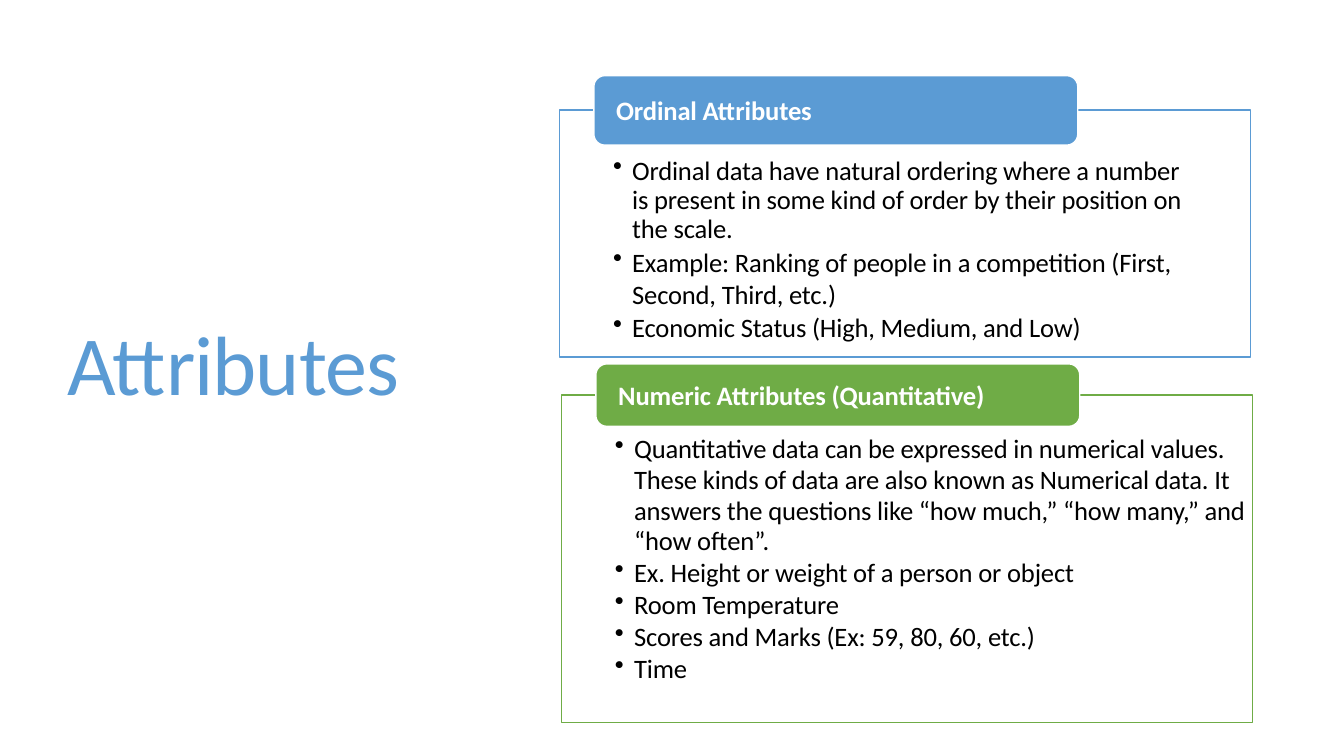
from dataclasses import dataclass

from lxml.etree import SubElement
from pptx import Presentation
from pptx.dml.color import RGBColor
from pptx.enum.shapes import MSO_SHAPE as Preset
from pptx.enum.text import MSO_ANCHOR as Anchor, PP_ALIGN as Align
from pptx.oxml.ns import qn
from pptx.shapes.autoshape import Shape
from pptx.slide import Slide
from pptx.text.text import TextFrame
from pptx.util import Inches, Pt

COLORS = {"blue": "5B9BD4", "green": "6FAC46", "white": "FFFFFF", "black": "000000"}
FONT = "Calibri"
PANEL_WIDTH = 6.85
TAB_WIDTH = 4.8
TAB_OFFSET = 0.34
TAB_RADIUS = 0.11
TEXT_OFFSET = 0.52


@dataclass
class Bullet:
    text: str
    line_spacing: float | None = None
    space_before: float = 0


@dataclass
class Panel:
    heading: str
    color: str
    left: float
    top: float
    height: float
    tab_top: float
    tab_height: float
    body_top: float
    body_width: float
    body_height: float
    bullets: list[Bullet]


PANELS = [
    Panel("Ordinal Attributes", "blue", 5.55, 1.09, 2.45, 0.75, 0.69, 1.55, 5.78, 1.85, [
        Bullet("Ordinal data have natural ordering where a number is present in some "
               "kind of order by their position on the scale.", 20.9),
        Bullet("Example: Ranking of people in a competition (First, Second, Third, etc.)",
               space_before=1.2),
        Bullet("Economic Status (High, Medium, and Low)", space_before=1.2),
    ]),
    Panel("Numeric Attributes (Quantitative)", "green", 5.57, 3.92, 3.25, 3.61, 0.62,
          4.3, 6.33, 2.53, [
              Bullet(text, 21.9, 0.9) for text in (
                  "Quantitative data can be expressed in numerical values. These kinds of "
                  "data are also known as Numerical data. It answers the questions like "
                  "“how much,” “how many,” and “how often”.",
                  "Ex. Height or weight of a person or object",
                  "Room Temperature",
                  "Scores and Marks (Ex: 59, 80, 60, etc.)",
                  "Time",
              )
          ]),
]


def rgb(name: str) -> RGBColor:
    return RGBColor.from_string(COLORS[name])


def write(frame: TextFrame, text: str, *, size: float = 19, color: str = "black",
          bold: bool = False, tracking: float = -0.1, line_spacing: float | None = None,
          space_before: float = 0, bullet: bool = False) -> None:
    """Add a paragraph, using the first one while the frame is still empty."""
    paragraph = frame.paragraphs[0] if not frame.text else frame.add_paragraph()
    paragraph.alignment = Align.LEFT
    paragraph.space_before = Pt(space_before)
    if line_spacing:
        paragraph.line_spacing = Pt(line_spacing)
    run = paragraph.add_run()
    run.text = text
    run.font.name = FONT
    run.font.size = Pt(size)
    run.font.bold = bold
    run.font.color.rgb = rgb(color)
    run._r.get_or_add_rPr().set("spc", str(round(tracking * 100)))
    if bullet:
        properties = paragraph._p.get_or_add_pPr()
        properties.set("marL", str(Inches(0.2)))
        properties.set("indent", str(Inches(-0.19)))
        SubElement(properties, qn("a:buChar")).set("char", "•")


def set_margins(frame: TextFrame, left: float = 0) -> None:
    frame.word_wrap = True
    frame.margin_left = Inches(left)
    frame.margin_top = frame.margin_right = frame.margin_bottom = 0


def add_text_area(slide: Slide, left: float, top: float, width: float,
                  height: float) -> TextFrame:
    area = slide.shapes.add_textbox(Inches(left), Inches(top), Inches(width), Inches(height))
    set_margins(area.text_frame)
    return area.text_frame


def add_box(slide: Slide, preset: Preset, left: float, top: float, width: float,
            height: float, line: str, fill: str | None = None) -> Shape:
    box = slide.shapes.add_shape(preset, Inches(left), Inches(top), Inches(width),
                                 Inches(height))
    box.shadow.inherit = False
    box.line.color.rgb = rgb(line)
    box.line.width = Pt(1)
    if fill:
        box.fill.solid()
        box.fill.fore_color.rgb = rgb(fill)
    else:
        box.fill.background()
    return box


def add_panel(slide: Slide, panel: Panel) -> None:
    """Draw a framed bullet list with a heading tab across its top edge."""
    add_box(slide, Preset.RECTANGLE, panel.left, panel.top, PANEL_WIDTH, panel.height,
            panel.color)

    tab = add_box(slide, Preset.ROUNDED_RECTANGLE, panel.left + TAB_OFFSET, panel.tab_top,
                  TAB_WIDTH, panel.tab_height, "white", panel.color)
    tab.adjustments[0] = TAB_RADIUS / panel.tab_height
    set_margins(tab.text_frame, left=0.19)
    tab.text_frame.vertical_anchor = Anchor.MIDDLE
    write(tab.text_frame, panel.heading, color="white", bold=True)

    body = add_text_area(slide, panel.left + TEXT_OFFSET, panel.body_top,
                         panel.body_width, panel.body_height)
    for item in panel.bullets:
        write(body, item.text, line_spacing=item.line_spacing,
              space_before=item.space_before, bullet=True)


def main() -> None:
    deck = Presentation()
    deck.slide_width, deck.slide_height = Inches(13.33), Inches(7.5)
    slide = deck.slides.add_slide(deck.slide_layouts[6])

    title = add_text_area(slide, 0.67, 3.09, 3.4, 1.02)
    write(title, "Attributes", size=60, color="blue", tracking=-0.7)
    for panel in PANELS:
        add_panel(slide, panel)

    deck.save("out.pptx")


if __name__ == "__main__":
    main()
